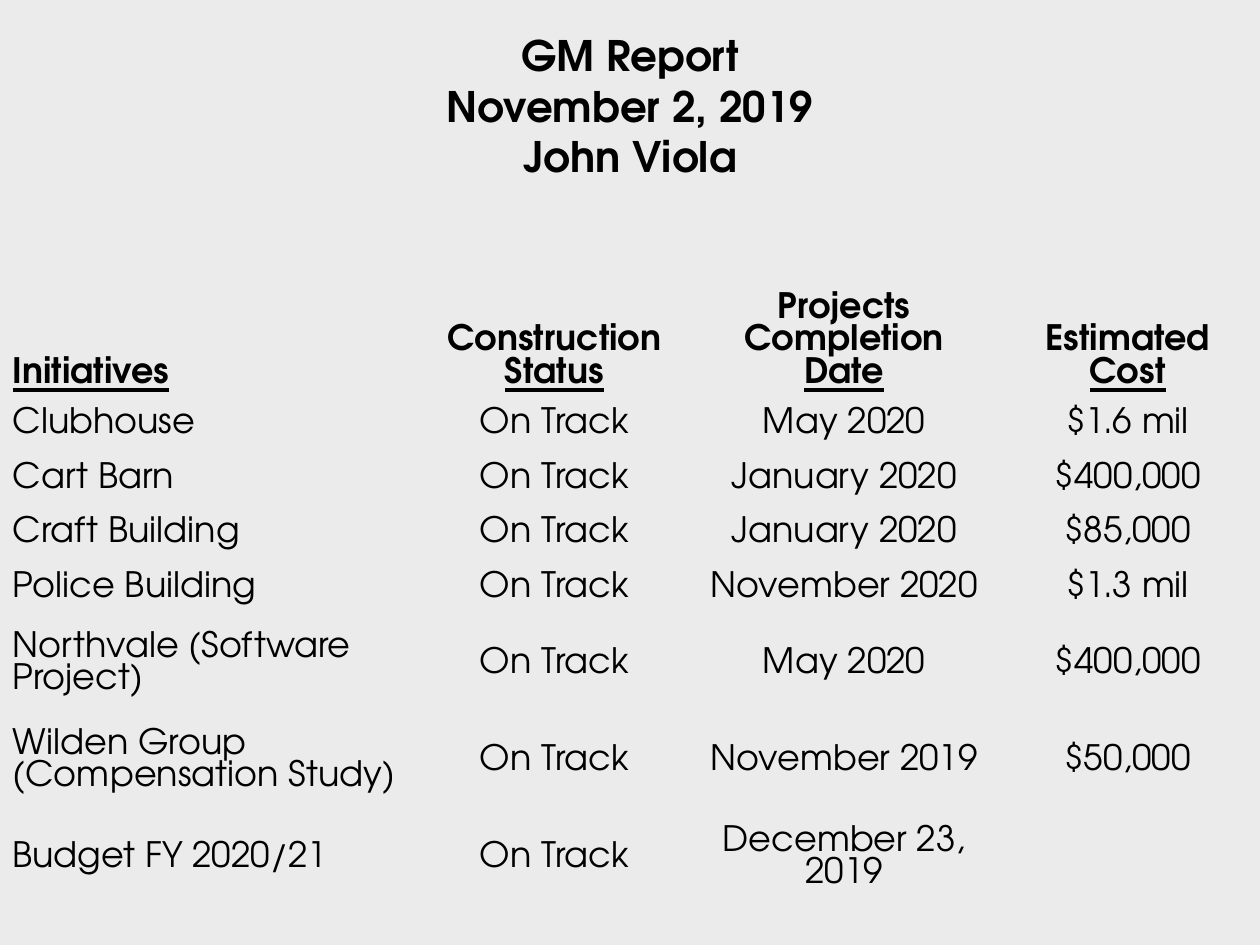
from pptx import Presentation
from pptx import util as u
from pptx.dml.color import RGBColor
from pptx.enum import text as t

Pt = u.Pt
BLACK = RGBColor(0, 0, 0)
GRAY = RGBColor(0xEB, 0xEB, 0xEB)
FONT = "TeX Gyre Adventor"
PLAIN = "{2D5ABB26-0587-4C30-8999-92F81FD0307C}"  # no style, no grid

COLS = [237.6, 158.4, 172.8, 151.2]
ROWS = [77] + [31.3] * 4 + [55.4] * 3
# Each heading: plain part, underlined part
HEADS = [("", "Initiatives"), ("Construction ", "Status"),
         ("Projects Completion ", "Date"), ("Estimated ", "Cost")]
ITEMS = [
    ("Clubhouse", "May 2020", "$1.6 mil"),
    ("Cart Barn", "January 2020", "$400,000"),
    ("Craft Building", "January 2020", "$85,000"),
    ("Police Building", "November 2020", "$1.3 mil"),
    ("Northvale (Software Project)", "May 2020", "$400,000"),
    ("Wilden Group (Compensation Study)", "November 2019", "$50,000"),
    ("Budget FY 2020/21", "December 23, 2019", ""),
]


def write(para, words, size=20, bold=False, line=False, align=None, gap=None):
    para.alignment = align
    para.line_spacing = gap
    run = para.add_run()
    run.text = words
    font = run.font
    font.name, font.size, font.bold = FONT, Pt(size), bold
    font.underline = line
    font.color.rgb = BLACK


def add_title(slide):
    box = slide.shapes.add_textbox(Pt(140.4), Pt(13.5), Pt(439.2), Pt(94.3))
    frame = box.text_frame
    frame.word_wrap = True
    frame.auto_size = t.MSO_AUTO_SIZE.SHAPE_TO_FIT_TEXT
    style = dict(size=24, bold=True, align=t.PP_ALIGN.CENTER)
    write(frame.paragraphs[0], "GM Report", **style)
    para = frame.add_paragraph()
    write(para, "November 2, 2019", **style)
    para.add_line_break()
    write(para, "John Viola", **style)


def fill_cell(cell, parts, col, head=False):
    cell.fill.background()
    cell.vertical_anchor = t.MSO_ANCHOR.BOTTOM if head else t.MSO_ANCHOR.MIDDLE
    cell.margin_top = Pt(5)
    cell.margin_bottom = Pt(2.5)
    align = t.PP_ALIGN.CENTER if col else t.PP_ALIGN.LEFT
    for words, line in parts:
        if words:
            write(cell.text_frame.paragraphs[0], words, bold=head, line=line,
                  align=align, gap=Pt(18.6))


def add_grid(slide):
    frame = slide.shapes.add_table(len(ROWS), len(COLS), Pt(0), Pt(148.3),
                                   Pt(sum(COLS)), Pt(sum(ROWS)))
    grid = frame.table
    grid.first_row = grid.horz_banding = False
    grid._tbl.tblPr.find("{*}tableStyleId").text = PLAIN
    for col, wide in zip(grid.columns, COLS):
        col.width = Pt(wide)
    for row, high in zip(grid.rows, ROWS):
        row.height = Pt(high)
    # Headings
    for c, (plain, lined) in enumerate(HEADS):
        fill_cell(grid.cell(0, c), [(plain, False), (lined, True)], c, True)
    # Initiatives
    for r, (name, date, cost) in enumerate(ITEMS, 1):
        for c, words in enumerate((name, "On Track", date, cost)):
            fill_cell(grid.cell(r, c), [(words, False)], c)


def main():
    prs = Presentation()
    prs.slide_width, prs.slide_height = Pt(720), Pt(540)
    slide = prs.slides.add_slide(prs.slide_layouts[6])
    back = slide.background.fill
    back.solid()
    back.fore_color.rgb = GRAY
    add_title(slide)
    add_grid(slide)
    prs.save("out.pptx")


if __name__ == "__main__":
    main()
